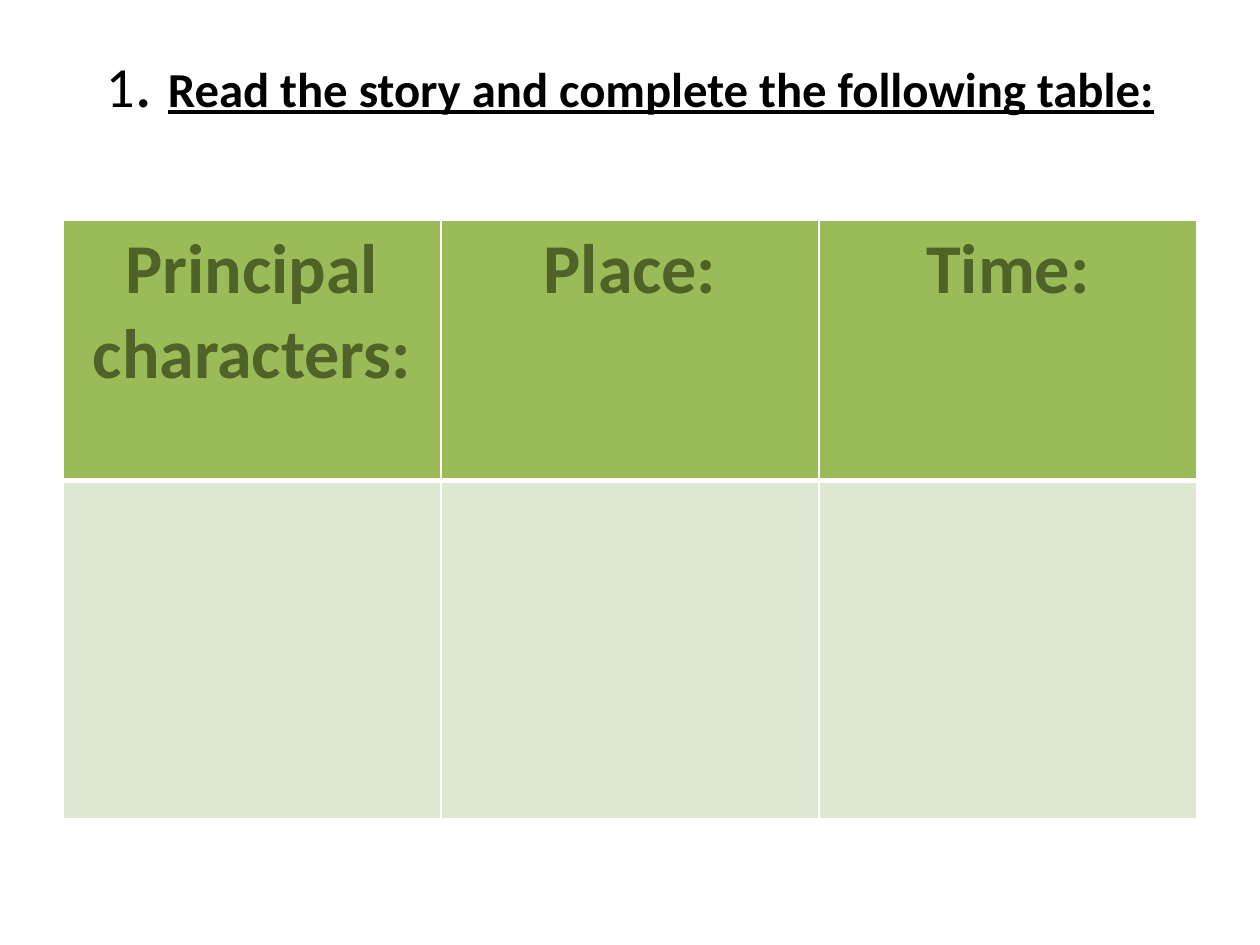
from lxml import etree
from pptx import Presentation
from pptx.dml.color import RGBColor
from pptx.enum import text
from pptx.oxml import ns
from pptx.util import Pt

FONT = "Calibri"
TITLE = [
    ("1", 32.4, False),
    (". ", 39.6, False),
    ("Read the story and complete the following table:", 27.9, True),
]
ROWS = [
    (148.5, "9BBB59", ["Principal characters:", "Place:", "Time:"]),
    (193.5, "DEE7D1", ["", "", ""]),
]
LEFT, TOP, WIDTH = 36, 126, 648
THIN, THICK = 1, 3


def color(code):
    return RGBColor.from_string(code)


def border(cell, widths):
    props = cell._tc.get_or_add_tcPr()
    for spot, (side, width) in enumerate(zip("LRTB", widths)):
        line = etree.Element(ns.qn("a:ln" + side), w=str(Pt(width)))
        fill = etree.SubElement(line, ns.qn("a:solidFill"))
        etree.SubElement(fill, ns.qn("a:srgbClr"), val="FFFFFF")
        props.insert(spot, line)


def add_title(slide):
    box = slide.shapes.add_textbox(Pt(LEFT), Pt(21.6), Pt(WIDTH), Pt(90))
    frame = box.text_frame
    frame.word_wrap = True
    frame.vertical_anchor = text.MSO_ANCHOR.TOP
    frame.margin_top = frame.margin_bottom = 0
    para = frame.paragraphs[0]
    para.alignment = text.PP_ALIGN.CENTER
    para.font.name = FONT
    para.font.color.rgb = color("000000")
    for words, size, strong in TITLE:
        run = para.add_run()
        run.text = words
        run.font.size = Pt(size)
        run.font.bold = run.font.underline = strong


def add_grid(slide):
    count = len(ROWS[0][2])
    height = sum(row[0] for row in ROWS)
    grid = slide.shapes.add_table(
        len(ROWS), count, Pt(LEFT), Pt(TOP), Pt(WIDTH), Pt(height)
    ).table
    for col in grid.columns:
        col.width = Pt(WIDTH / count)
    for r, (tall, fill, labels) in enumerate(ROWS):
        grid.rows[r].height = Pt(tall)
        edges = (THIN, THIN, THICK if r else THIN, THIN if r else THICK)
        for c, label in enumerate(labels):
            cell = grid.cell(r, c)
            cell.fill.solid()
            cell.fill.fore_color.rgb = color(fill)
            border(cell, edges)
            if label:
                cell.text = label
                para = cell.text_frame.paragraphs[0]
                para.alignment = text.PP_ALIGN.CENTER
                para.font.name = FONT
                para.font.size = Pt(40)
                para.font.bold = True
                para.font.color.rgb = color("4F6228")


def main():
    deck = Presentation()
    deck.slide_width, deck.slide_height = Pt(720), Pt(540)
    slide = deck.slides.add_slide(deck.slide_layouts[6])
    add_title(slide)
    add_grid(slide)
    deck.save("out.pptx")


if __name__ == "__main__":
    main()
